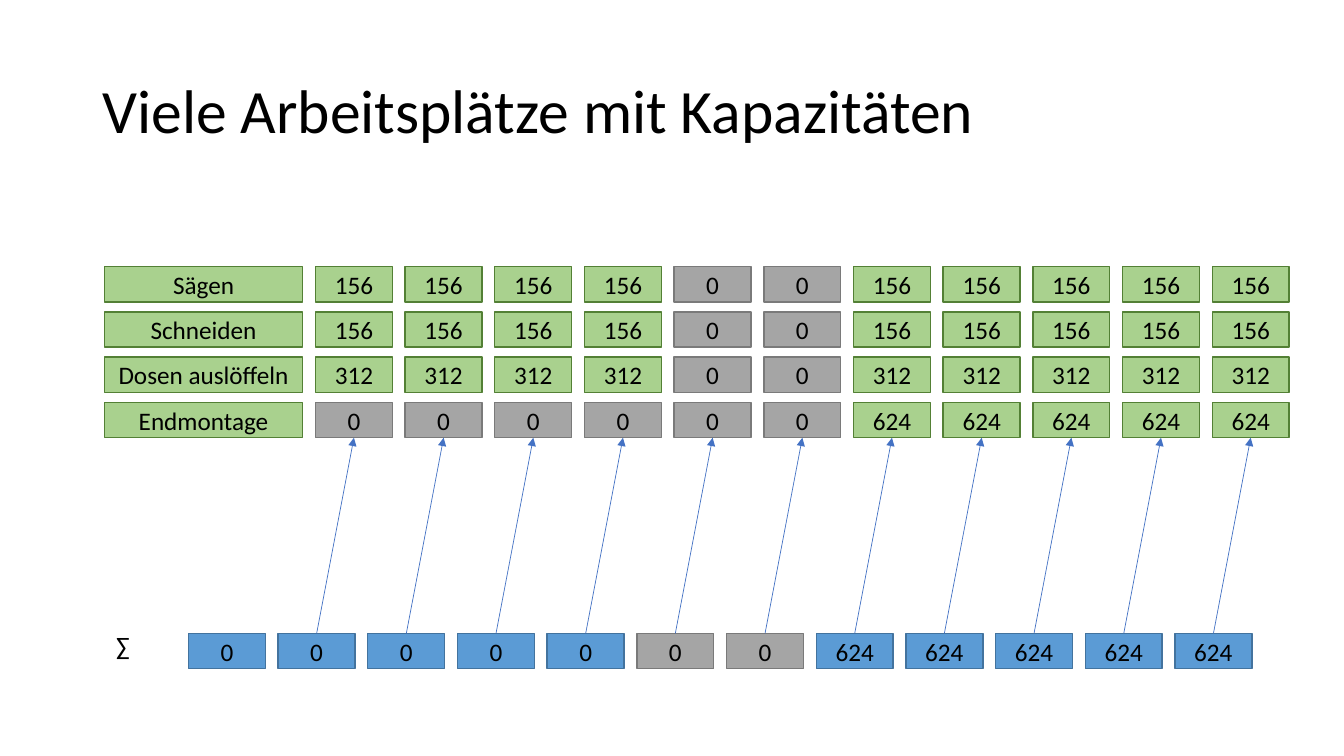
from dataclasses import dataclass

from lxml import etree
from pptx import Presentation
from pptx import util as u
from pptx.dml.color import RGBColor
from pptx.enum import shapes, text
from pptx.oxml import ns


@dataclass(frozen=True)
class Theme:
    font: str = "Calibri"
    title_size: int = 44
    body_size: int = 18
    ink: str = "000000"
    arrow: str = "4472C4"
    # Pairs of fill and outline
    busy: tuple = ("A9D18E", "538035")
    idle: tuple = ("A5A5A5", "7A7A7A")
    total: tuple = ("5B9BD5", "43739E")


class SlideBuilder:
    def __init__(self, slide, theme):
        self.slide = slide
        self.theme = theme

    def format_text(self, frame, size, align):
        frame.vertical_anchor = text.MSO_ANCHOR.MIDDLE
        paragraph = frame.paragraphs[0]
        paragraph.alignment = align
        for run in paragraph.runs:
            run.font.name = self.theme.font
            run.font.size = u.Pt(size)
            run.font.color.rgb = RGBColor.from_string(self.theme.ink)

    def title(self, wording, left, top, width, height):
        heading = self.slide.shapes.title
        heading.left, heading.top = u.Cm(left), u.Cm(top)
        heading.width, heading.height = u.Cm(width), u.Cm(height)
        heading.text_frame.text = wording
        heading.text_frame.paragraphs[0].line_spacing = 0.9
        self.format_text(heading.text_frame, self.theme.title_size, text.PP_ALIGN.LEFT)

    def box(self, wording, left, top, width, height, colours):
        fill, outline = colours
        cell = self.slide.shapes.add_shape(
            shapes.MSO_SHAPE.RECTANGLE, u.Cm(left), u.Cm(top), u.Cm(width), u.Cm(height))
        cell.shadow.inherit = False
        cell.fill.solid()
        cell.fill.fore_color.rgb = RGBColor.from_string(fill)
        cell.line.color.rgb = RGBColor.from_string(outline)
        cell.line.width = u.Pt(1)
        cell.text_frame.text = wording
        self.format_text(cell.text_frame, self.theme.body_size, text.PP_ALIGN.CENTER)
        return cell

    def label(self, wording, left, top, width, height):
        caption = self.slide.shapes.add_textbox(
            u.Cm(left), u.Cm(top), u.Cm(width), u.Cm(height))
        caption.text_frame.word_wrap = True
        caption.text_frame.auto_size = text.MSO_AUTO_SIZE.SHAPE_TO_FIT_TEXT
        caption.text_frame.text = wording
        self.format_text(caption.text_frame, self.theme.body_size, text.PP_ALIGN.CENTER)

    def arrow(self, lower, upper):
        """Runs from the top of the lower box to the bottom of the upper one."""
        link = self.slide.shapes.add_connector(shapes.MSO_CONNECTOR.STRAIGHT, 0, 0, 0, 0)
        link.begin_connect(lower, 0)
        link.end_connect(upper, 2)
        link.line.color.rgb = RGBColor.from_string(self.theme.arrow)
        link.line.width = u.Pt(0.5)
        etree.SubElement(link.line._get_or_add_ln(), ns.qn("a:tailEnd"), type="triangle")
        etree.SubElement(link._element.spPr, ns.qn("a:effectLst"))


# Capacities per workplace and day
WORKPLACES = {
    "Sägen": [156] * 4 + [0] * 2 + [156] * 5,
    "Schneiden": [156] * 4 + [0] * 2 + [156] * 5,
    "Dosen auslöffeln": [312] * 4 + [0] * 2 + [312] * 5,
    "Endmontage": [0] * 6 + [624] * 5,
}
TOTALS = [0] * 7 + [624] * 5
IDLE_TOTALS = (5, 6)

# Grid in centimetres
LABEL_LEFT, LABEL_WIDTH = 2.64, 4.98
DAYS_LEFT, TOTALS_LEFT = 7.95, 4.75
DAY_WIDTH, DAY_PITCH = 1.94, 2.26
ROWS_TOP, ROW_HEIGHT, ROW_PITCH = 6.72, 0.89, 1.14
TOTALS_TOP = 15.96


def main():
    deck = Presentation()
    deck.slide_width, deck.slide_height = u.Cm(33.87), u.Cm(19.05)
    theme = Theme()
    builder = SlideBuilder(deck.slides.add_slide(deck.slide_layouts[5]), theme)
    builder.title("Viele Arbeitsplätze mit Kapazitäten", 2.33, 1.01, 29.21, 3.68)

    # Workplace rows
    for row, (workplace, capacities) in enumerate(WORKPLACES.items()):
        top = ROWS_TOP + row * ROW_PITCH
        builder.box(workplace, LABEL_LEFT, top, LABEL_WIDTH, ROW_HEIGHT, theme.busy)
        day_boxes = [
            builder.box(str(capacity), DAYS_LEFT + day * DAY_PITCH, top,
                        DAY_WIDTH, ROW_HEIGHT, theme.busy if capacity else theme.idle)
            for day, capacity in enumerate(capacities)
        ]
    assembly_boxes = day_boxes  # the last row is Endmontage

    # Totals row
    builder.label("∑", 2.06, 15.75, 2.08, 1.02)
    total_boxes = [
        builder.box(str(total), TOTALS_LEFT + day * DAY_PITCH, TOTALS_TOP,
                    DAY_WIDTH, ROW_HEIGHT,
                    theme.idle if day in IDLE_TOTALS else theme.total)
        for day, total in enumerate(TOTALS)
    ]

    # Each total after the first feeds the final assembly
    for total_box, assembly_box in zip(total_boxes[1:], assembly_boxes):
        builder.arrow(total_box, assembly_box)

    deck.save("out.pptx")


if __name__ == "__main__":
    main()
